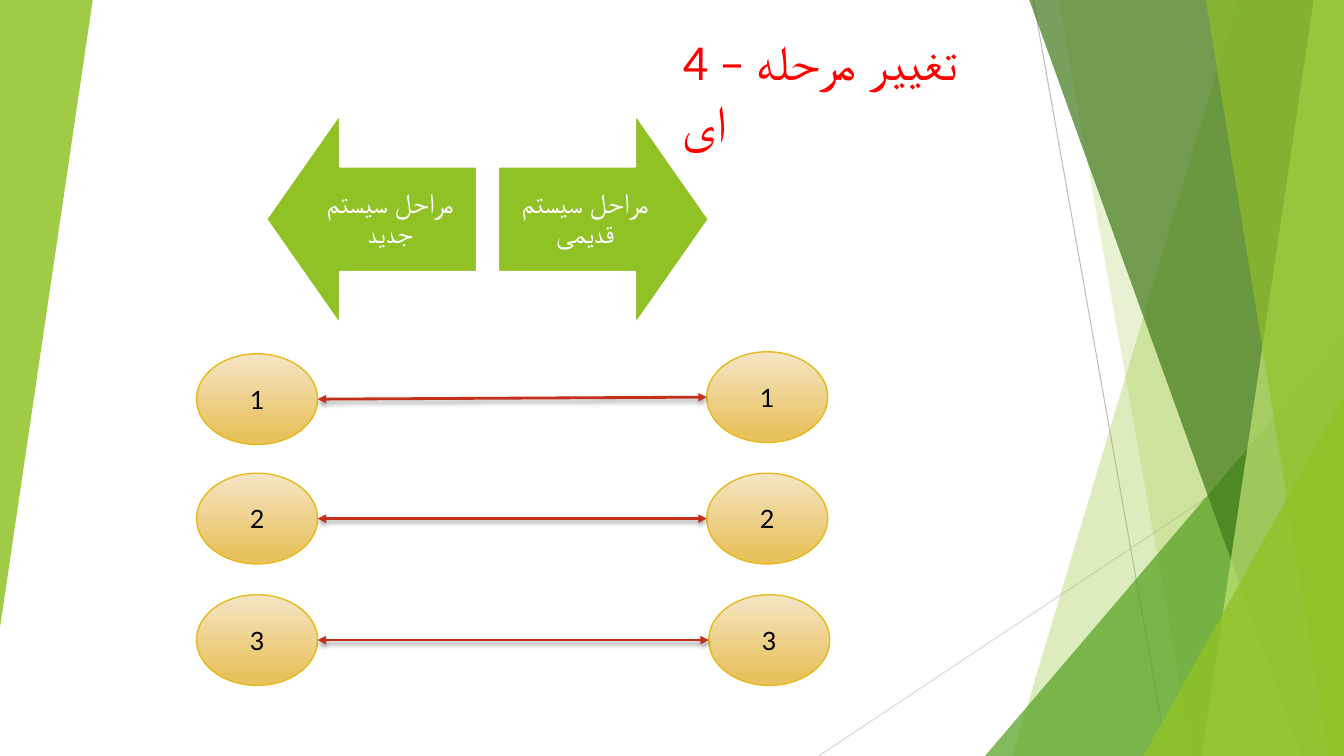
from collections import namedtuple

from lxml.etree import SubElement
from pptx import Presentation
from pptx.dml.color import RGBColor
from pptx.enum.shapes import MSO_CONNECTOR, MSO_SHAPE
from pptx.enum.text import MSO_ANCHOR, MSO_AUTO_SIZE, PP_ALIGN
from pptx.oxml.ns import qn
from pptx.util import Inches, Pt

Box = namedtuple("Box", "left top width height")
SLIDE = Box(0, 0, 13.33, 7.5)
COLOURS = {
    "lime": "90C226", "green": "54A021", "forest": "3F7819", "pale": "C0E474",
    "grey": "BFBFBF", "silver": "D9D9D9", "white": "FFFFFF", "black": "000000",
    "title": "FF0000", "sand": "F5E5C5", "gold": "E9C260", "rim": "E6B91E",
    "link": "C42F1A",
}


def colour(name):
    return RGBColor.from_string(COLOURS[name])


def place(shape, box):
    for side, length in box._asdict().items():
        setattr(shape, side, Inches(length))


def add_preset(page, kind, box):
    shape = page.shapes.add_shape(kind, *map(Inches, box))
    shape.shadow.inherit = False
    return shape


def fill_clear(shape, name, opacity):
    """Fill without outline; opacity is a percentage."""
    shape.shadow.inherit = False
    shape.fill.solid()
    shape.fill.fore_color.rgb = colour(name)
    tint = shape.fill._xPr.find(qn("a:solidFill"))[0]
    SubElement(tint, qn("a:alpha"), val=str(opacity * 1000))
    shape.line.fill.background()


def write(shape, text, font, size, name, **frame_format):
    frame = shape.text_frame
    frame.word_wrap = True
    for key, value in frame_format.items():
        setattr(frame, key, value)
    para = frame.paragraphs[0]
    span = para.add_run()
    span.text = text
    for key, value in {"name": font, "size": Pt(size)}.items():
        setattr(span.font, key, value)
    span.font.color.rgb = colour(name)
    return para


def add_line(page, start, end, name, width):
    line = page.shapes.add_connector(
        MSO_CONNECTOR.STRAIGHT, *map(Inches, (*start, *end)))
    line.line.color.rgb = colour(name)
    line.line.width = Pt(width)
    effects = SubElement(line._element.spPr, qn("a:effectLst"))
    return line, effects


def draw_facets(page, box):
    """Side decoration, in percent of the box."""
    def across(share):
        return box.left + box.width * share / 100

    def down(share):
        return box.top + box.height * share / 100

    right, bottom = across(100), down(100)

    # Thin crossing lines
    for start, end, name in (((76.89, 0), (86.87, 100), "grey"),
                             ((100, 53.73), (60.92, 100), "silver")):
        add_line(page, (across(start[0]), down(start[1])),
                 (across(end[0]), down(end[1])), name, 0.75)

    # Right panes: x at the top, x at the bottom, y of the top, colour, opacity
    panes = [
        (92.12, 75.32, 0, "lime", 30),
        (78.77, 88.75, 0, "lime", 20),
        (100, 73.29, 44.4, "green", 72),
        (76.59, 96.85, 0, "forest", 70),
        (97.75, 89.42, 0, "pale", 70),
        (89.72, 98.87, 0, "lime", 65),
        (100, 85.07, 52.4, "lime", 80),
    ]
    for top_x, bottom_x, top_y, name, opacity in panes:
        x, y = across(bottom_x), down(top_y)
        if top_x == 100:
            pane = add_preset(page, MSO_SHAPE.ISOSCELES_TRIANGLE,
                              Box(x, y, right - x, bottom - y))
            pane.adjustments[0] = 1
        else:
            corners = [(across(top_x), y), (right, y), (right, bottom), (x, bottom)]
            points = [tuple(map(Inches, corner)) for corner in corners]
            outline = page.shapes.build_freeform(*points[0])
            outline.add_line_segments(points[1:], close=True)
            pane = outline.convert_to_shape()
        fill_clear(pane, name, opacity)

    # Left wedge
    wedge = add_preset(page, MSO_SHAPE.ISOSCELES_TRIANGLE,
                       Box(box.left, box.top, box.width * 0.069, box.height * 0.83))
    wedge.adjustments[0] = 1
    wedge.rotation = 180
    fill_clear(wedge, "lime", 85)


def draw_title(page, box):
    title = page.shapes.title
    place(title, box)
    para = write(title, "4 – تغییر مرحله ای", "Calibri", 36, "title",
                 vertical_anchor=MSO_ANCHOR.TOP,
                 auto_size=MSO_AUTO_SIZE.SHAPE_TO_FIT_TEXT)
    para.alignment = PP_ALIGN.LEFT


def draw_arrows(page, box):
    """Two square arrows pointing away from each other."""
    side = box.height
    arrows = [
        (MSO_SHAPE.LEFT_ARROW, box.left, "مراحل سیستم جدید"),
        (MSO_SHAPE.RIGHT_ARROW, box.left + box.width - side, "مراحل سیستم قدیمی"),
    ]
    margins = {f"margin_{edge}": Inches(0.16)
               for edge in ("left", "top", "right", "bottom")}
    for kind, left, text in arrows:
        arrow = add_preset(page, kind, Box(left, box.top, side, side))
        arrow.adjustments[0], arrow.adjustments[1] = 0.5, 0.35
        arrow.fill.solid()
        arrow.fill.fore_color.rgb = colour("lime")
        arrow.line.color.rgb = colour("white")
        arrow.line.width = Pt(1.5)
        para = write(arrow, text, "Lato", 20, "white",
                     vertical_anchor=MSO_ANCHOR.MIDDLE, **margins)
        para.alignment = PP_ALIGN.CENTER
        para.line_spacing = 0.9
        para._p.get_or_add_pPr().set("rtl", "1")


def draw_stage(page, box, label):
    oval = add_preset(page, MSO_SHAPE.OVAL, box)
    oval.fill.gradient()
    oval.fill.gradient_angle = 270
    stops = zip(oval.fill.gradient_stops, ("sand", "gold"), (0, 0.88))
    for stop, name, position in stops:
        stop.color.rgb = colour(name)
        stop.position = position
    oval.line.color.rgb = colour("rim")
    oval.line.width = Pt(1)
    para = write(oval, label, "Lato", 18, "black",
                 vertical_anchor=MSO_ANCHOR.MIDDLE)
    para.alignment = PP_ALIGN.CENTER


def draw_link(page, start, end):
    """Double-headed arrow with a soft shadow below."""
    link, effects = add_line(page, start, end, "link", 2)
    outline = link.line._get_or_add_ln()
    for tip in ("a:headEnd", "a:tailEnd"):
        SubElement(outline, qn(tip), type="triangle")
    shadow = SubElement(effects, qn("a:outerShdw"), blurRad=str(Pt(3)),
                        dist=str(Pt(2)), dir="5400000", rotWithShape="0")
    tint = SubElement(shadow, qn("a:srgbClr"), val=COLOURS["black"])
    SubElement(tint, qn("a:alpha"), val="35000")


def draw_stages(page, box):
    """Three linked pairs of ovals."""
    width, height = 1.2, 0.9
    pitch = (box.height - height) / 2
    right = box.left + box.width - width
    # Small shifts: left oval down, right oval down, right oval across
    shifts = [(0.02, 0, 0), (0, 0, 0), (0, 0, 0.02)]
    for row, (left_down, right_down, right_across) in enumerate(shifts):
        top = box.top + row * pitch
        old = Box(right + right_across, top + right_down, width, height)
        new = Box(box.left, top + left_down, width, height)
        for oval in (old, new):
            draw_stage(page, oval, str(row + 1))
        draw_link(page, (old.left, old.top + height / 2),
                  (new.left + width, new.top + height / 2))


def main():
    deck = Presentation()
    deck.slide_width, deck.slide_height = Inches(SLIDE.width), Inches(SLIDE.height)
    page = deck.slides.add_slide(deck.slide_layouts[5])
    draw_facets(page, SLIDE)
    draw_title(page, Box(6.67, 0.25, 3.41, 0.71))
    draw_arrows(page, Box(2.64, 1.13, 4.39, 2.09))
    draw_stages(page, Box(1.95, 3.49, 6.26, 3.31))
    deck.save("out.pptx")


if __name__ == "__main__":
    main()
